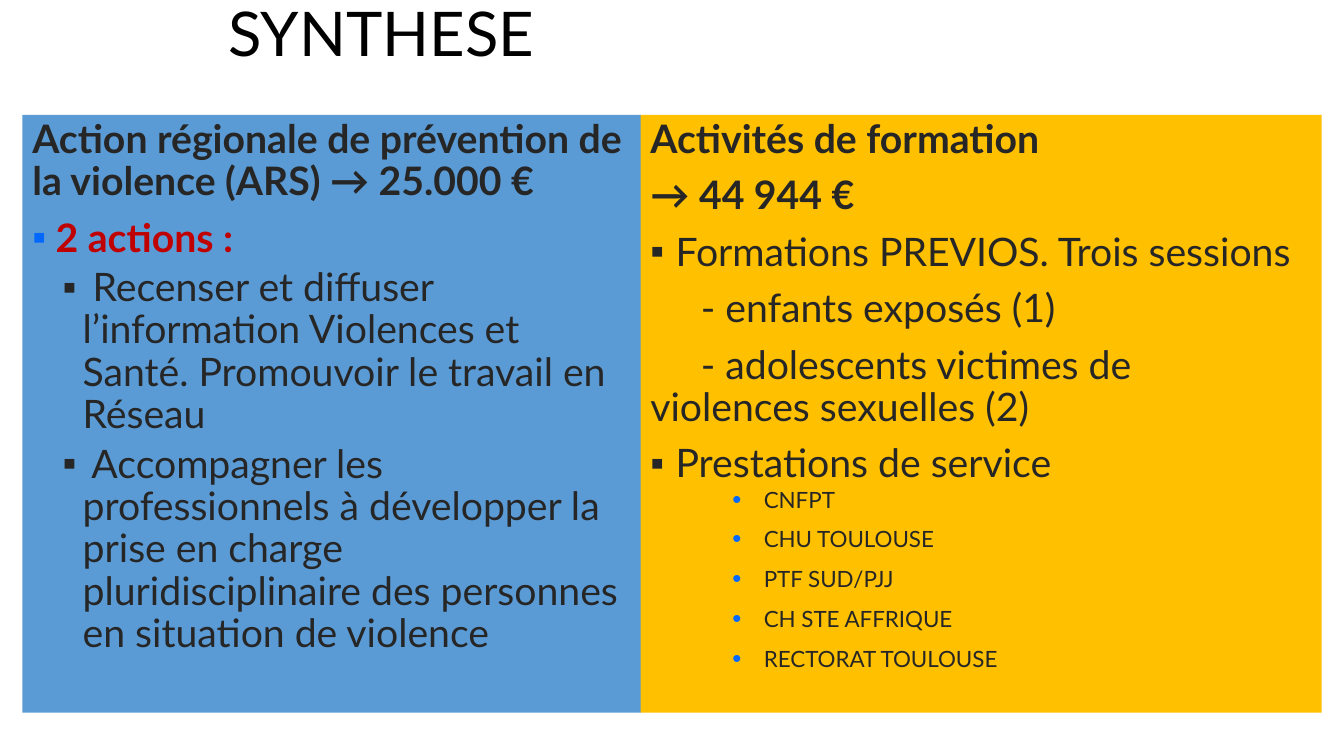
from pptx import Presentation
from pptx.dml.color import RGBColor
from pptx.enum.shapes import MSO_SHAPE
from pptx.enum.text import MSO_ANCHOR, PP_ALIGN
from pptx.oxml.ns import qn
from pptx.util import Pt
from lxml.etree import SubElement

# Content
COLORS = {"black": "000000", "text": "262626", "red": "C00000",
          "bullet": "0068FF", "blue": "5B9BD5", "gold": "FFC000"}
FONT = "Lato"
TITLE = "SYNTHESE"

# Paragraph styles; indents and spacing in points
STYLES = {
    "heading": dict(bold=True, before=5, level=1),
    "lead": dict(bold=True, color="red", bullet="▪", bullet_color="bullet"),
    "action": dict(bullet="▪", margin=36, indent=-14.4, before=5, level=1),
    "hanging": dict(bold=True, margin=18, indent=-18),
    "item": dict(bullet="▪", margin=18, indent=-18),
    "detail": dict(),
    "client": dict(size=16, bullet="•", bullet_color="bullet", bullet_size=115,
                   margin=58.5, indent=-22.5, before=3.2, after=6, spacing=1, level=1),
}
ACTIONS = [
    ("heading", "Action régionale de prévention de la violence (ARS) → 25.000 €"),
    ("lead", " 2 actions :"),
    ("action", " Recenser et diffuser l’information Violences et Santé. "
               "Promouvoir le travail en Réseau"),
    ("action", " Accompagner les professionnels à développer la prise en charge "
               "pluridisciplinaire des personnes en situation de violence"),
]
TRAINING = [
    ("hanging", "Activités de formation"),
    ("hanging", "→ 44 944 €"),
    ("item", "Formations PREVIOS. Trois sessions"),
    ("detail", "\t- enfants exposés (1)"),
    ("detail", "\t- adolescents victimes de \tviolences sexuelles (2)"),
    ("item", "Prestations de service"),
]
CLIENTS = [("client", name) for name in (
    "CNFPT", "CHU TOULOUSE", "PTF SUD/PJJ", "CH STE AFFRIQUE", "RECTORAT TOULOUSE")]

# Layout in points
TITLE_BOX = (156, -2, 648, 56)
CLIENT_BOX = (480, 343.5, 423, 166)
PANEL_TOP, PANEL_HEIGHT = 82, 427
PANELS = [(16, 442, "blue", ACTIONS), (457.5, 486.5, "gold", TRAINING)]


def rgb(name):
    return RGBColor.from_string(COLORS[name])


def format_run(r, size, color, bold=False):
    r.font.name = FONT
    r.font.size = Pt(size)
    r.font.bold = bold
    r.font.color.rgb = rgb(color)


def format_paragraph(p, size=28, color="text", bold=False, bullet=None,
                     bullet_color=None, bullet_size=100, margin=0, indent=0,
                     before=10, after=0, spacing=0.9, level=0):
    p.alignment = PP_ALIGN.LEFT
    p.level = level
    p.line_spacing = spacing
    p.space_before, p.space_after = Pt(before), Pt(after)
    pPr = p._p.get_or_add_pPr()
    pPr.set("marL", str(Pt(margin)))
    pPr.set("indent", str(Pt(indent)))
    if bullet:
        if bullet_color:
            clr = SubElement(pPr, qn("a:buClr"))
            SubElement(clr, qn("a:srgbClr"), val=COLORS[bullet_color])
        SubElement(pPr, qn("a:buSzPct"), val=str(bullet_size * 1000))
        SubElement(pPr, qn("a:buFont"), typeface="Arial")
        SubElement(pPr, qn("a:buChar"), char=bullet)
    else:
        SubElement(pPr, qn("a:buNone"))
    for r in p.runs:
        format_run(r, size, color, bold)


def fill_text(tf, paragraphs):
    tf.word_wrap = True
    tf.vertical_anchor = MSO_ANCHOR.TOP
    tf.text = "\n".join(text for _, text in paragraphs)
    for p, (style, _) in zip(tf.paragraphs, paragraphs):
        format_paragraph(p, **STYLES[style])


prs = Presentation()
prs.slide_width, prs.slide_height = Pt(960), Pt(540)
s = prs.slides.add_slide(prs.slide_layouts[5])

# Title
title = s.shapes.title
title.left, title.top, title.width, title.height = map(Pt, TITLE_BOX)
tf = title.text_frame
tf.text = TITLE
tf.vertical_anchor = MSO_ANCHOR.MIDDLE
p = tf.paragraphs[0]
p.alignment = PP_ALIGN.LEFT
p.line_spacing = 0.9
format_run(p.runs[0], 44, "black")

# Two coloured panels
for left, width, color, paragraphs in PANELS:
    sp = s.shapes.add_shape(MSO_SHAPE.RECTANGLE, Pt(left), Pt(PANEL_TOP),
                            Pt(width), Pt(PANEL_HEIGHT))
    sp.shadow.inherit = False
    sp.fill.solid()
    sp.fill.fore_color.rgb = rgb(color)
    sp.line.fill.background()
    fill_text(sp.text_frame, paragraphs)

# Client list over the right panel
box = s.shapes.add_textbox(*map(Pt, CLIENT_BOX))
fill_text(box.text_frame, CLIENTS)

prs.save("out.pptx")
